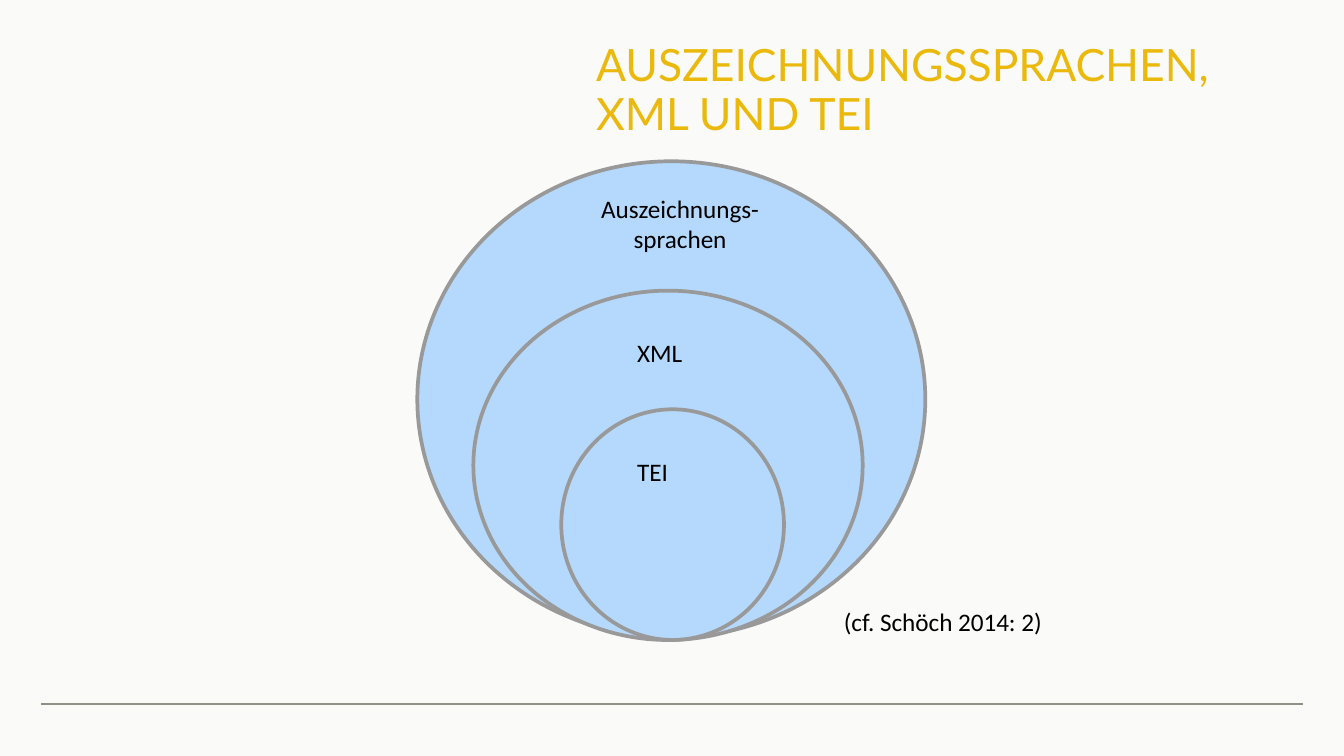
from pptx import Presentation
from pptx import util as u
from pptx.dml.color import RGBColor
from pptx.enum import shapes, text
from pptx.oxml.ns import qn
from lxml import etree

PAPER = RGBColor(0xFA, 0xFA, 0xF9)
GOLD = RGBColor(0xEA, 0xB9, 0x0C)
SKY = RGBColor(0xB4, 0xD9, 0xFC)
GREY = RGBColor(0x99, 0x99, 0x99)
RULE = RGBColor(0x90, 0x90, 0x85)
BLACK = RGBColor(0, 0, 0)

TITLE = {"name": "Lato", "size": u.Pt(24), "bold": False}
LABEL = {"name": "Calibri", "size": u.Pt(13.6)}

# Outermost set first, so that each one lies on top of the set around it
SETS = [
    (3.13, 1.21, 3.81, 3.57),
    (3.55, 2.18, 2.92, 2.62),
    (4.21, 3.07, 1.67, 1.73),
]
LABELS = [
    ("Auszeichnungs-sprachen", (4.09, 1.4, 2.02, 0.56), text.PP_ALIGN.CENTER),
    ("XML", (4.68, 2.48, 0.71, 0.33), text.PP_ALIGN.LEFT),
    ("TEI", (4.68, 3.37, 0.83, 0.33), text.PP_ALIGN.LEFT),
    ("(cf. Schöch 2014: 2)", (6.23, 4.5, 2.08, 0.33), text.PP_ALIGN.LEFT),
]


def inches(box):
    return [u.Inches(n) for n in box]


def style(font, look, color):
    for key, value in look.items():
        setattr(font, key, value)
    font.color.rgb = color


def add_title(slide, words, box):
    title = slide.shapes.title
    title.left, title.top, title.width, title.height = inches(box)
    frame = title.text_frame
    frame.text = words
    form = {
        "margin_left": u.Inches(0.08), "margin_right": 0,
        "margin_top": 0, "margin_bottom": 0, "word_wrap": True,
        "auto_size": text.MSO_AUTO_SIZE.NONE,
        "vertical_anchor": text.MSO_ANCHOR.TOP,
    }
    for key, value in form.items():
        setattr(frame, key, value)
    para = frame.paragraphs[0]
    para.alignment = text.PP_ALIGN.LEFT
    para.line_spacing = u.Pt(26)
    style(para.runs[0].font, TITLE, GOLD)


def add_set(slide, box):
    oval = slide.shapes.add_shape(shapes.MSO_SHAPE.OVAL, *inches(box))
    oval.shadow.inherit = False
    oval.fill.solid()
    oval.fill.fore_color.rgb = SKY
    oval.line.color.rgb = GREY
    oval.line.width = u.Pt(2)


def add_label(slide, words, box, align):
    frame = slide.shapes.add_textbox(*inches(box)).text_frame
    frame.word_wrap = True
    frame.auto_size = text.MSO_AUTO_SIZE.SHAPE_TO_FIT_TEXT
    frame.text = words
    para = frame.paragraphs[0]
    para.alignment = align
    style(para.runs[0].font, LABEL, BLACK)


def add_rule(slide, left, right, top):
    rule = slide.shapes.add_connector(
        shapes.MSO_CONNECTOR.STRAIGHT, *inches((left, top, right, top)))
    rule.line.color.rgb = RULE
    rule.line.width = u.Pt(1)
    etree.SubElement(rule._element.spPr, qn("a:effectLst"))


def main():
    deck = Presentation()
    deck.slide_width, deck.slide_height = inches((10.08, 5.67))
    slide = deck.slides.add_slide(deck.slide_layouts[5])
    slide.background.fill.solid()
    slide.background.fill.fore_color.rgb = PAPER

    add_rule(slide, 0.31, 9.77, 5.28)
    add_title(slide, "AUSZEICHNUNGSSPRACHEN, XML UND TEI",
              (4.39, 0.32, 5.38, 0.71))
    for box in SETS:
        add_set(slide, box)
    for label in LABELS:
        add_label(slide, *label)
    deck.save("out.pptx")


if __name__ == "__main__":
    main()
